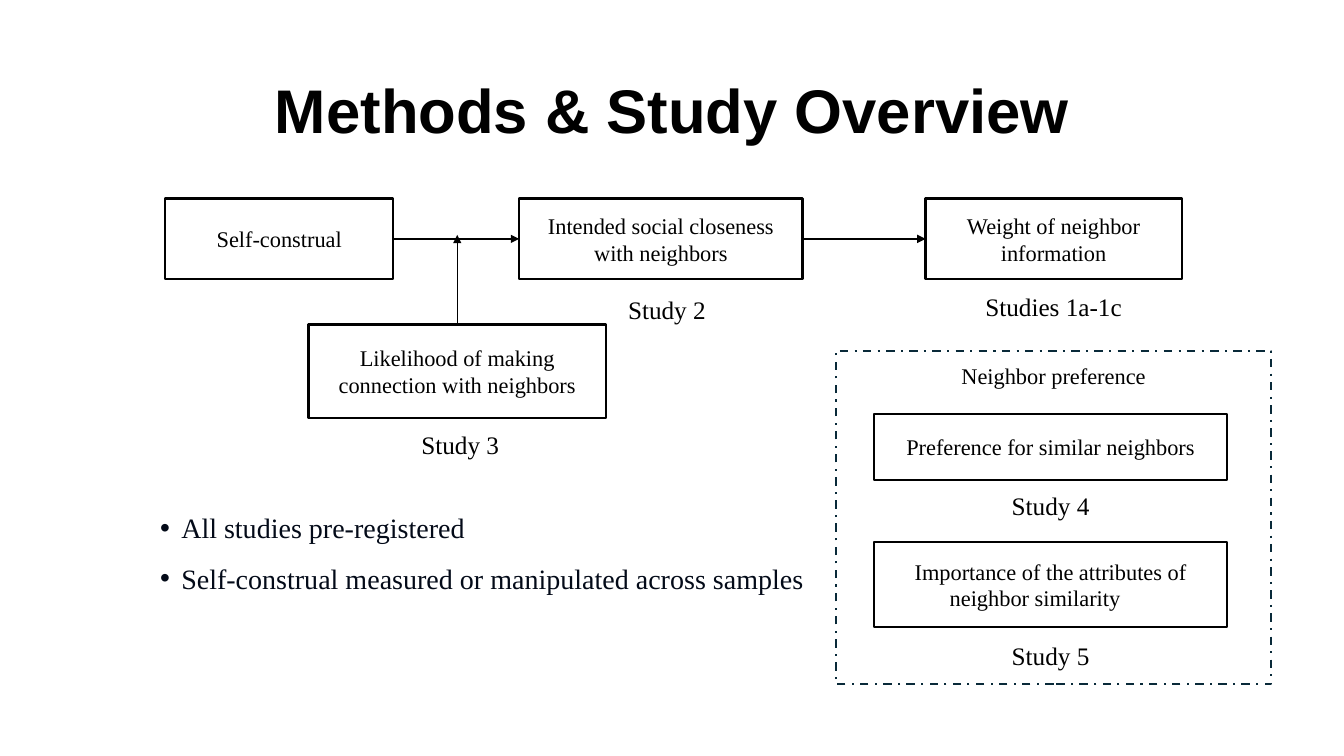
import pptx
import pptx.dml.color
import pptx.enum.dml
import pptx.enum.shapes
import pptx.enum.text
import pptx.oxml
import pptx.util
from dataclasses import dataclass

Inches, Pt = pptx.util.Inches, pptx.util.Pt
ALIGN = pptx.enum.text.PP_ALIGN
MIDDLE = pptx.enum.text.MSO_ANCHOR.MIDDLE
TOP, LEFT, RIGHT = 0, 1, 3  # connection sites of a rectangle


@dataclass(frozen=True)
class Theme:
    ink: str = "000000"
    body: str = "030A18"
    frame: str = "092A39"
    head_font: str = "Arial"
    text_font: str = "Times New Roman"
    title: int = 44
    bullet: int = 20
    study: int = 18
    label: int = 16
    outline: float = 1.5
    arrow: float = 1


T = Theme()


def rgb(value):
    return pptx.dml.color.RGBColor.from_string(value)


def add_xml(parent, tag, attrs=""):
    ns = 'xmlns:a="http://schemas.openxmlformats.org/drawingml/2006/main"'
    parent.append(pptx.oxml.parse_xml(f"<a:{tag} {ns} {attrs}/>"))


def write(tf, text, size=T.label, font=T.text_font, color=T.ink, bold=False,
          align=ALIGN.CENTER, spacing=None, bullet=False):
    """Fill a text frame, one paragraph for each line of text."""
    for i, line in enumerate(text.split("\n")):
        p = tf.add_paragraph() if i else tf.paragraphs[0]
        p.alignment = align
        if spacing:
            p.line_spacing = spacing
        if bullet:
            pPr = p._p.get_or_add_pPr()
            pPr.set("marL", str(Inches(0.21)))
            pPr.set("indent", str(-Inches(0.21)))
            add_xml(pPr, "buFont", 'typeface="Arial"')
            add_xml(pPr, "buChar", 'char="•"')
        r = p.add_run()
        r.text = line
        r.font.size, r.font.name, r.font.bold = Pt(size), font, bold
        r.font.color.rgb = rgb(color)


def text_box(s, x, y, w, h, text, anchor=None, wrap=True, **fmt):
    tf = s.shapes.add_textbox(*map(Inches, (x, y, w, h))).text_frame
    tf.word_wrap = wrap
    if anchor is not None:
        tf.vertical_anchor = anchor
    write(tf, text, **fmt)


def rect(s, x, y, w, h, text="", color=T.ink, dash=None):
    sp = s.shapes.add_shape(pptx.enum.shapes.MSO_SHAPE.RECTANGLE,
                            *map(Inches, (x, y, w, h)))
    sp.shadow.inherit = False
    sp.fill.background()
    sp.line.color.rgb = rgb(color)
    sp.line.width = Pt(T.outline)
    if dash:
        sp.line.dash_style = dash
    if text:
        sp.text_frame.word_wrap = True
        sp.text_frame.vertical_anchor = MIDDLE
        write(sp.text_frame, text)
    return sp


def study_label(s, sp, text, gap, dx=0.0, w=1.6):
    """Name the study below a box, centred on it and moved by dx."""
    x = (sp.left + sp.width / 2) / Inches(1) - w / 2 + dx
    y = (sp.top + sp.height) / Inches(1) + gap
    text_box(s, x, y, w, 0.4, text, size=T.study)


def arrow(s, start, site, end=None, point=(0, 0)):
    """Arrow from a box side to the left of another box, or to a point."""
    c = s.shapes.add_connector(pptx.enum.shapes.MSO_CONNECTOR.STRAIGHT,
                               0, 0, *point)
    c.begin_connect(start, site)
    if end is not None:
        c.end_connect(end, LEFT)
    c.line.color.rgb = rgb(T.ink)
    c.line.width = Pt(T.arrow)
    add_xml(c.line._get_or_add_ln(), "tailEnd", 'type="triangle"')
    add_xml(c._element.spPr, "effectLst")


def title(s, x, y, w, h):
    text_box(s, x, y, w, h, "Methods & Study Overview", anchor=MIDDLE,
             size=T.title, font=T.head_font, bold=True, spacing=0.9)


def causal_model(s, x, y, w, h):
    # Main row: predictor, mediator, outcome
    row = 0.8
    construal = rect(s, x, y, 2.26, row, "Self-construal")
    closeness = rect(s, x + 3.51, y, 2.81, row,
                     "Intended social closeness with neighbors")
    weight = rect(s, x + w - 2.54, y, 2.54, row,
                  "Weight of neighbor information")
    arrow(s, construal, RIGHT, closeness)
    arrow(s, closeness, RIGHT, weight)

    # Moderator, pointing at the first arrow
    likelihood = rect(s, x + 1.42, y + h - 0.93, 2.95, 0.93,
                      "Likelihood of making connection with neighbors")
    arrow(s, likelihood, TOP,
          point=(likelihood.left + likelihood.width // 2,
                 Inches(y + row / 2 - 0.04)))

    study_label(s, weight, "Studies 1a-1c", 0.07, w=1.85)
    study_label(s, closeness, "Study 2", 0.1, dx=0.06)
    study_label(s, likelihood, "Study 3", 0.06, dx=0.03)


def design_notes(s, x, y, w, h):
    text_box(s, x, y, w, h,
             "All studies pre-registered\n"
             "Self‑construal measured or manipulated across samples",
             anchor=MIDDLE, size=T.bullet, color=T.body, align=ALIGN.LEFT,
             spacing=1.5, bullet=True)


def preference_panel(s, x, y, w, h):
    rect(s, x, y, w, h, color=T.frame,
         dash=pptx.enum.dml.MSO_LINE.DASH_DOT)
    text_box(s, x + (w - 2.06) / 2, y + 0.06, 2.06, 0.37,
             "Neighbor preference", wrap=False)
    inset = 0.38
    for dy, bh, text, study, gap in (
            (0.63, 0.65, "Preference for similar neighbors", "Study 4", 0.06),
            (1.9, 0.84, "Importance of the attributes of neighbor similarity\t",
             "Study 5", 0.08)):
        sp = rect(s, x + inset, y + dy, 3.5, bh, text)
        study_label(s, sp, study, gap)


def main():
    prs = pptx.Presentation()
    prs.slide_width, prs.slide_height = Inches(13.33), Inches(7.5)
    s = prs.slides.add_slide(prs.slide_layouts[6])
    title(s, 0.92, 0.4, 11.5, 1.45)
    causal_model(s, 1.64, 1.97, 10.08, 2.18)
    design_notes(s, 1.49, 4.88, 7, 1.04)
    preference_panel(s, 8.29, 3.48, 4.32, 3.31)
    prs.save("out.pptx")


if __name__ == "__main__":
    main()
